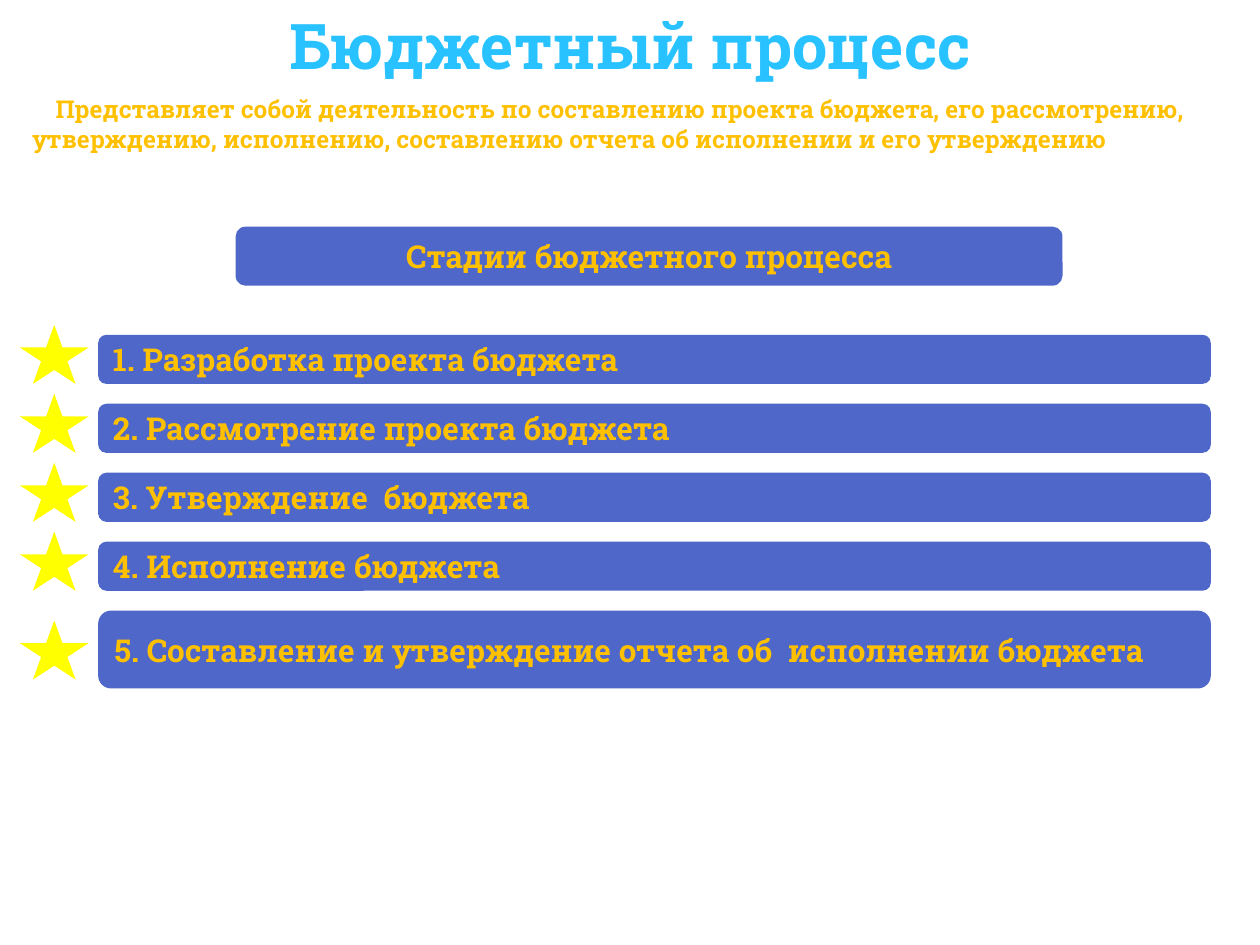
from dataclasses import dataclass

from pptx import Presentation
from pptx.dml.color import RGBColor
from pptx.enum.shapes import MSO_SHAPE
from pptx.enum.text import MSO_ANCHOR, MSO_AUTO_SIZE, PP_ALIGN
from pptx.shapes.autoshape import Shape
from pptx.slide import Slide
from pptx.util import Cm, Pt

ROUNDED = MSO_SHAPE.ROUNDED_RECTANGLE
STAR = MSO_SHAPE.STAR_5_POINT
MIDDLE = MSO_ANCHOR.MIDDLE
GROW = MSO_AUTO_SIZE.SHAPE_TO_FIT_TEXT
LEFT = PP_ALIGN.LEFT
CENTER = PP_ALIGN.CENTER

FONT = "Roboto Slab"
SKY = "27C2FF"
GOLD = "FFC000"
BLUE = "4E67C8"
YELLOW = "FFFF00"

FIRST_STAGE_TOP = 6.75
STAGE_PITCH = 1.39


@dataclass(frozen=True)
class Area:
    left: float
    top: float
    width: float
    height: float

    def lengths(self) -> tuple[Cm, Cm, Cm, Cm]:
        return Cm(self.left), Cm(self.top), Cm(self.width), Cm(self.height)


@dataclass(frozen=True)
class Stage:
    text: str
    height: float = 0.99
    star_shift: float = -0.2


STAGES = (
    Stage("1. Разработка проекта бюджета"),
    Stage("2. Рассмотрение проекта бюджета"),
    Stage("3. Утверждение  бюджета"),
    Stage("4. Исполнение бюджета"),
    Stage(
        "5. Составление и утверждение отчета об  исполнении бюджета",
        height=1.57,
        star_shift=0.2,
    ),
)


def color(value: str) -> RGBColor:
    return RGBColor.from_string(value)


def write(
    box: Shape,
    text: str,
    *,
    size: float = 18,
    ink: str = GOLD,
    align: PP_ALIGN = LEFT,
    indent: float = 0,
) -> None:
    box.text_frame.word_wrap = True
    para = box.text_frame.paragraphs[0]
    para.alignment = align
    if indent:
        para._p.get_or_add_pPr().set("indent", str(int(Cm(indent))))
    span = para.add_run()
    span.text = text
    span.font.name = FONT
    span.font.size = Pt(size)
    span.font.bold = True
    span.font.color.rgb = color(ink)


def add_text(slide: Slide, area: Area, text: str, **style) -> None:
    box = slide.shapes.add_textbox(*area.lengths())
    write(box, text, **style)
    box.text_frame.auto_size = GROW


def add_filled(slide: Slide, kind: MSO_SHAPE, area: Area, fill: str) -> Shape:
    shape = slide.shapes.add_shape(kind, *area.lengths())
    shape.shadow.inherit = False
    shape.fill.solid()
    shape.fill.fore_color.rgb = color(fill)
    shape.line.fill.background()
    return shape


def add_bar(slide: Slide, area: Area, text: str, align: PP_ALIGN = LEFT) -> None:
    bar = add_filled(slide, ROUNDED, area, BLUE)
    bar.text_frame.vertical_anchor = MIDDLE
    write(bar, text, align=align)


def add_stage(slide: Slide, stage: Stage, top: float) -> None:
    add_filled(slide, STAR, Area(0.4, top + stage.star_shift, 1.39, 1.19), YELLOW)
    add_bar(slide, Area(1.98, top, 22.43, stage.height), stage.text)


def main() -> None:
    deck = Presentation()
    deck.slide_width, deck.slide_height = Cm(25.4), Cm(19.05)
    page = deck.slides.add_slide(deck.slide_layouts[6])
    page.background.fill.solid()
    page.background.fill.fore_color.rgb = color("FFFFFF")

    add_text(
        page,
        Area(0.4, 1.78, 24.6, 2.06),
        "Представляет собой деятельность по составлению проекта бюджета, "
        "его рассмотрению, утверждению, исполнению, составлению отчета "
        "об исполнении и его утверждению",
        size=14,
        indent=0.47,
    )
    add_text(
        page,
        Area(0, 0, 25.4, 1.78),
        "Бюджетный процесс",
        size=36,
        ink=SKY,
        align=CENTER,
    )
    add_bar(page, Area(4.75, 4.57, 16.67, 1.19), "Стадии бюджетного процесса", CENTER)
    for index, stage in enumerate(STAGES):
        add_stage(page, stage, FIRST_STAGE_TOP + index * STAGE_PITCH)

    deck.save("out.pptx")


if __name__ == "__main__":
    main()
